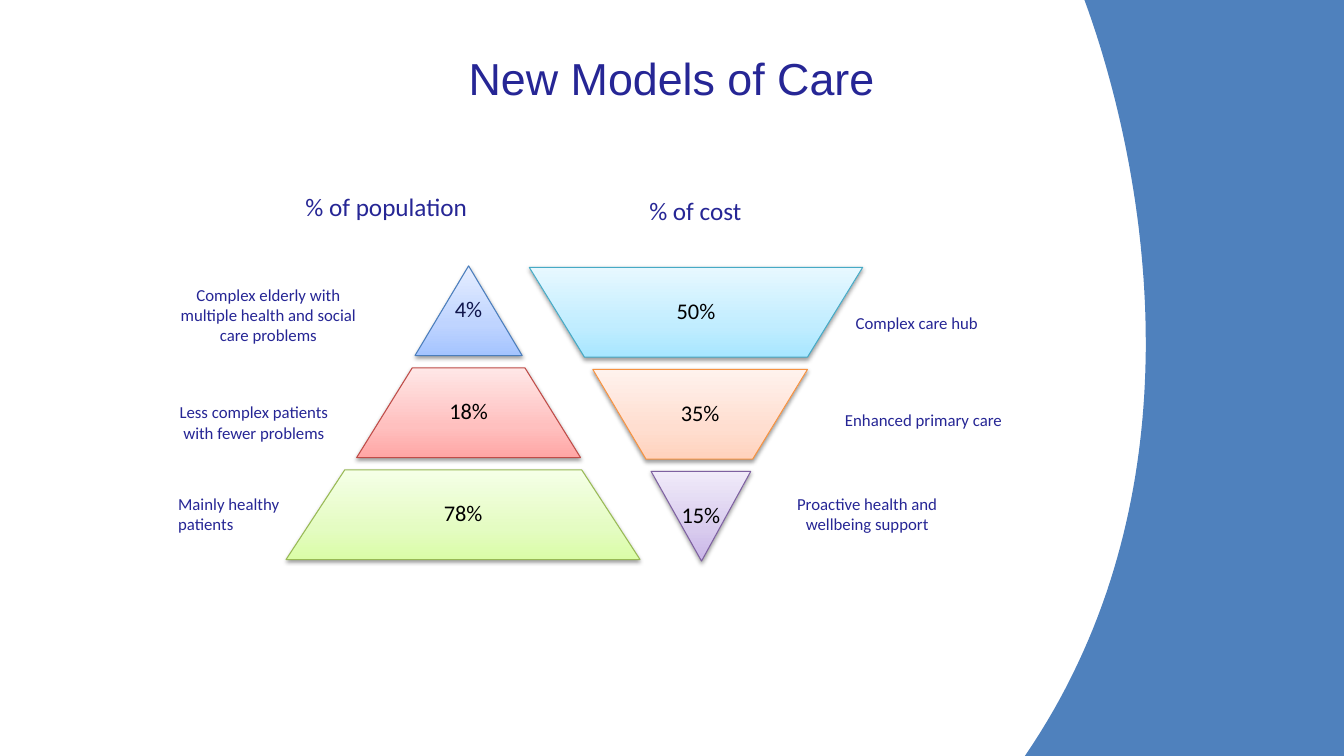
from copy import deepcopy
from dataclasses import dataclass

from lxml.etree import SubElement
from pptx import Presentation
from pptx.dml.color import RGBColor
from pptx.enum.text import MSO_ANCHOR as Anchor, PP_ALIGN as Align
from pptx.oxml.ns import qn
from pptx.util import Cm, Pt


@dataclass(frozen=True)
class Theme:
    """Colours, fonts and type sizes of the slide."""
    navy: str = "262695"
    dark_navy: str = "10164D"
    black: str = "000000"
    swoosh: str = "4F81BD"
    title_font: str = "Arial"
    body_font: str = "Calibri"
    title_size: int = 32
    heading_size: int = 18
    tier_size: int = 16
    label_size: int = 12
    blue: tuple = ("A4C4FF", "BFD4FF", "E6EEFF", "4B7EBC")
    red: tuple = ("FFA6A5", "FFC0BF", "FFE7E7", "BF4C48")
    green: tuple = ("DAFDA7", "E4FCC2", "F5FFE7", "98B955")
    aqua: tuple = ("A7E6FF", "C1EDFF", "E7F8FF", "46AAC5")
    orange: tuple = ("FFD2BD", "FFDED0", "FFF2ED", "F69240")
    purple: tuple = ("C9B5E8", "D8CBEE", "F0EAF9", "7D60A0")


def write_text(shape, text, *, size, color, font, align=Align.CENTER,
               anchor=Anchor.TOP, line_spacing=None):
    """Write one formatted paragraph into a shape."""
    frame = shape.text_frame
    frame.word_wrap = True
    frame.vertical_anchor = anchor
    paragraph = frame.paragraphs[0]
    paragraph.text = text
    paragraph.alignment = align
    paragraph.line_spacing = line_spacing
    paragraph.font.size = Pt(size)
    paragraph.font.name = font
    paragraph.font.color.rgb = RGBColor.from_string(color)


def bezier(start, control_a, control_b, end, steps=80):
    """Return points along a cubic curve."""
    points = []
    for step in range(steps + 1):
        t = step / steps
        weights = ((1 - t) ** 3, 3 * t * (1 - t) ** 2, 3 * t ** 2 * (1 - t), t ** 3)
        points.append(tuple(
            sum(weight * value for weight, value in zip(weights, values))
            for values in zip(start, control_a, control_b, end)))
    return points


class SlideBuilder:
    """Draws styled elements on the current slide."""

    def __init__(self, slide, theme):
        """Keep the slide and its theme."""
        self.slide = slide
        self.theme = theme

    def outline(self, points):
        """Add a closed outline through points given in centimetres."""
        corners = [(Cm(x), Cm(y)) for x, y in points]
        builder = self.slide.shapes.build_freeform(*corners[0])
        builder.add_line_segments(corners[1:], close=True)
        shape = builder.convert_to_shape()
        shape.shadow.inherit = False
        return shape

    def swoosh(self, points):
        """Add the plain curved side panel."""
        shape = self.outline(points)
        shape.fill.solid()
        shape.fill.fore_color.rgb = RGBColor.from_string(self.theme.swoosh)
        shape.line.fill.background()

    def tier(self, text, top, height, upper, lower, colors, text_color):
        """Add one pyramid tier between its upper and lower edges."""
        bottom = top + height
        shape = self.outline([(lower[0], bottom), (upper[0], top),
                              (upper[1], top), (lower[1], bottom)])
        self.shade(shape, colors)
        self.drop_shadow(shape)
        write_text(shape, text, size=self.theme.tier_size, color=text_color,
                   font=self.theme.body_font, anchor=Anchor.MIDDLE, line_spacing=0.9)

    def shade(self, shape, colors):
        """Apply a three-stop upward gradient and a thin outline."""
        *stop_colors, line_color = colors
        shape.fill.gradient()
        shape.fill.gradient_angle = 90
        stop_list = shape._element.spPr.find(qn("a:gradFill")).find(qn("a:gsLst"))
        stop_list.insert(1, deepcopy(stop_list[0]))
        for stop, position, color in zip(shape.fill.gradient_stops, (0, 0.35, 1), stop_colors):
            stop.position = position
            stop.color.rgb = RGBColor.from_string(color)
        shape.line.color.rgb = RGBColor.from_string(line_color)
        shape.line.width = Pt(0.75)

    def drop_shadow(self, shape):
        """Add a soft shadow below a shape."""
        effects = shape._element.spPr.find(qn("a:effectLst"))
        shadow = SubElement(effects, qn("a:outerShdw"), blurRad=str(Pt(3.15)),
                            dist=str(Pt(1.57)), dir="5400000", rotWithShape="0")
        color = SubElement(shadow, qn("a:srgbClr"), val=self.theme.black)
        SubElement(color, qn("a:alpha"), val="38000")

    def text(self, text, left, top, width, height, size, font=None, **text_format):
        """Add a navy text box."""
        box = self.slide.shapes.add_textbox(Cm(left), Cm(top), Cm(width), Cm(height))
        write_text(box, text, size=size, color=self.theme.navy,
                   font=font or self.theme.body_font, **text_format)


def main():
    """Build and save the slide."""
    theme = Theme()
    presentation = Presentation()
    presentation.slide_width, presentation.slide_height = Cm(33.87), Cm(19.05)
    slide = presentation.slides.add_slide(presentation.slide_layouts[6])
    builder = SlideBuilder(slide, theme)

    curve = bezier((27.33, 0), (28.17, 2.26), (31.04, 11.43), (25.83, 19.05))
    builder.swoosh([(33.87, 0), *curve, (33.87, 19.05)])
    builder.text("New Models of Care", 6.53, 0.36, 20.8, 3.18, theme.title_size,
                 font=theme.title_font, anchor=Anchor.MIDDLE)

    population = [
        ("4%", (11.81, 11.81), (10.46, 13.16), theme.blue, theme.dark_navy),
        ("18%", (10.39, 13.23), (8.99, 14.63), theme.red, theme.black),
        ("78%", (8.69, 14.66), (7.21, 16.13), theme.green, theme.black),
    ]
    cost = [
        ("50%", (13.34, 21.74), (14.73, 20.35), theme.aqua, theme.black),
        ("35%", (14.94, 20.35), (16.28, 18.97), theme.orange, theme.black),
        ("15%", (16.41, 18.92), (17.68, 17.68), theme.purple, theme.black),
    ]
    for first_top, tiers in ((6.7, population), (6.74, cost)):
        for row, (share, upper, lower, colors, text_color) in enumerate(tiers):
            builder.tier(share, first_top + row * 2.57, 2.26, upper, lower,
                         colors, text_color)

    for heading, left, top in (("% of population", 7.32, 4.7), ("% of cost", 15.11, 4.8)):
        builder.text(heading, left, top, 4.83, 1.8, theme.heading_size)

    labels = [
        ("Complex elderly with multiple health and social care problems",
         4.01, 7.04, 5.51, 1.8, Align.CENTER),
        ("Less complex patients with fewer problems", 3.96, 10.01, 4.88, 1.27, Align.CENTER),
        ("Mainly healthy patients", 4.24, 12.32, 3.81, 1.27, Align.LEFT),
        ("Complex care hub", 20.35, 7.75, 5.51, 0.76, Align.CENTER),
        ("Enhanced primary care", 20.52, 10.21, 5.51, 0.76, Align.CENTER),
        ("Proactive health and wellbeing support", 19.1, 12.32, 5.51, 1.27, Align.CENTER),
    ]
    for label, left, top, width, height, align in labels:
        builder.text(label, left, top, width, height, theme.label_size, align=align)

    presentation.save("out.pptx")


if __name__ == "__main__":
    main()
